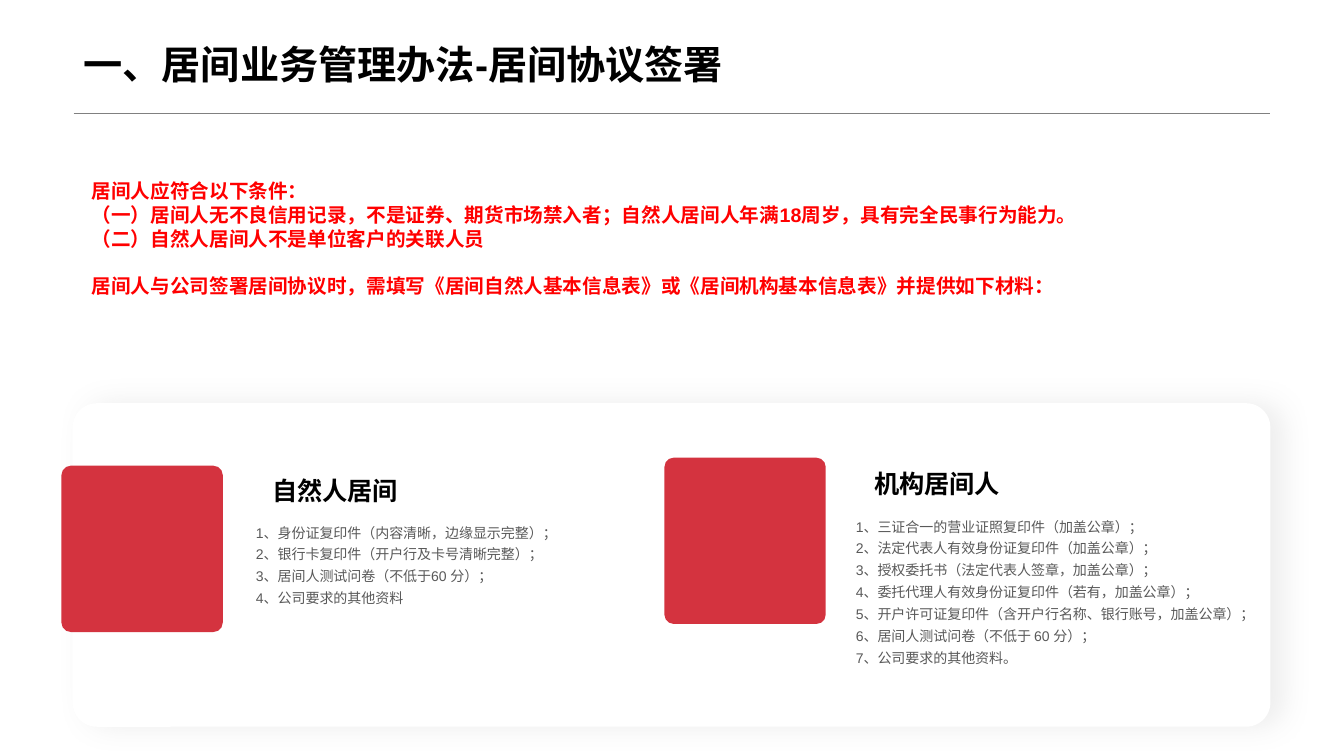
from lxml import etree
from pptx import Presentation
from pptx.dml.color import RGBColor
from pptx.enum.shapes import MSO_CONNECTOR, MSO_SHAPE
from pptx.oxml import parse_xml
from pptx.oxml.ns import qn
from pptx.util import Inches, Pt

STRAIGHT = MSO_CONNECTOR.STRAIGHT
ROUNDED = MSO_SHAPE.ROUNDED_RECTANGLE

BLACK = RGBColor(0x00, 0x00, 0x00)
WHITE = RGBColor(0xFF, 0xFF, 0xFF)
GRAY = RGBColor(0x80, 0x80, 0x80)
BODY_GRAY = RGBColor(0x59, 0x59, 0x59)
BRIGHT_RED = RGBColor(0xFF, 0x00, 0x00)
TILE_RED = RGBColor(0xD4, 0x33, 0x3F)

TITLE = "一、居间业务管理办法-居间协议签署"
CONDITIONS = [
    "居间人应符合以下条件：",
    "（一）居间人无不良信用记录，不是证券、期货市场禁入者；自然人居间人年满18周岁，具有完全民事行为能力。",
    "（二）自然人居间人不是单位客户的关联人员",
    "居间人与公司签署居间协议时，需填写《居间自然人基本信息表》或《居间机构基本信息表》并提供如下材料：",
]
# Each group: tile corner, heading box, list box, heading, items
GROUPS = [
    ((0.61, 4.62), (2.6, 4.67, 2.56, 0.4), (2.44, 5.1, 3.79, 0.98), "自然人居间", [
        "1、身份证复印件（内容清晰，边缘显示完整）；",
        "2、银行卡复印件（开户行及卡号清晰完整）；",
        "3、居间人测试问卷（不低于60 分）；",
        "4、公司要求的其他资料",
    ]),
    ((6.59, 4.54), (8.57, 4.6, 4.39, 0.4), (8.39, 5.04, 4.39, 1.63), "机构居间人", [
        "1、三证合一的营业证照复印件（加盖公章）；",
        "2、法定代表人有效身份证复印件（加盖公章）；",
        "3、授权委托书（法定代表人签章，加盖公章）；",
        "4、委托代理人有效身份证复印件（若有，加盖公章）；",
        "5、开户许可证复印件（含开户行名称、银行账号，加盖公章）；",
        "6、居间人测试问卷（不低于 60 分）；",
        "7、公司要求的其他资料。",
    ]),
]
TILE_SIZE = (1.6, 1.65)

CARD_SHADOW = (
    '<a:outerShdw xmlns:a="http://schemas.openxmlformats.org/drawingml/2006/main" '
    f'blurRad="{Pt(20)}" dist="{Pt(10)}" dir="0" rotWithShape="0">'
    '<a:srgbClr val="A6A6A6"><a:alpha val="20000"/></a:srgbClr></a:outerShdw>'
)


def add_text(slide, box, lines, size, color, bold=False, line_spacing=1.0):
    """Add a wrapped text box with one paragraph per line and return its paragraphs."""
    frame = slide.shapes.add_textbox(*map(Inches, box)).text_frame
    frame.word_wrap = True
    frame.text = "\n".join(lines)
    for paragraph in frame.paragraphs:
        paragraph.line_spacing = line_spacing
        paragraph.font.name = "Arial"
        paragraph.font.size = Pt(size)
        paragraph.font.bold = bold
        paragraph.font.color.rgb = color
    return frame.paragraphs


def add_panel(slide, box, color, corner):
    """Add a borderless rounded rectangle."""
    shape = slide.shapes.add_shape(ROUNDED, *map(Inches, box))
    shape.adjustments[0] = corner
    shape.shadow.inherit = False
    shape.fill.solid()
    shape.fill.fore_color.rgb = color
    shape.line.fill.background()
    return shape


def main():
    presentation = Presentation()
    presentation.slide_width = Inches(13.33)
    presentation.slide_height = Inches(7.5)
    slide = presentation.slides.add_slide(presentation.slide_layouts[6])

    rule = slide.shapes.add_connector(
        STRAIGHT, Inches(0.73), Inches(1.12), Inches(12.6), Inches(1.12))
    rule.line.color.rgb = GRAY
    rule.line.width = Pt(0.25)
    etree.SubElement(rule._element.spPr, qn("a:effectLst"))

    card = add_panel(slide, (0.72, 4, 11.88, 3.21), WHITE, 0.075)
    card._element.spPr.find(qn("a:effectLst")).append(parse_xml(CARD_SHADOW))

    for tile_corner, heading_box, list_box, heading, items in GROUPS:
        add_panel(slide, tile_corner + TILE_SIZE, TILE_RED, 0.058)
        add_text(slide, list_box, items, 10, BODY_GRAY, line_spacing=1.3)
        add_text(slide, heading_box, [heading], 18, BLACK, bold=True)

    conditions = add_text(
        slide, (0.81, 1.73, 10.75, 1.28), CONDITIONS, 14, BRIGHT_RED, bold=True)
    conditions[-1].space_before = Pt(16.8)

    add_text(slide, (0.73, 0.4, 11.87, 0.73), [TITLE], 28, BLACK,
             bold=True, line_spacing=0.9)

    presentation.save("out.pptx")


if __name__ == "__main__":
    main()
